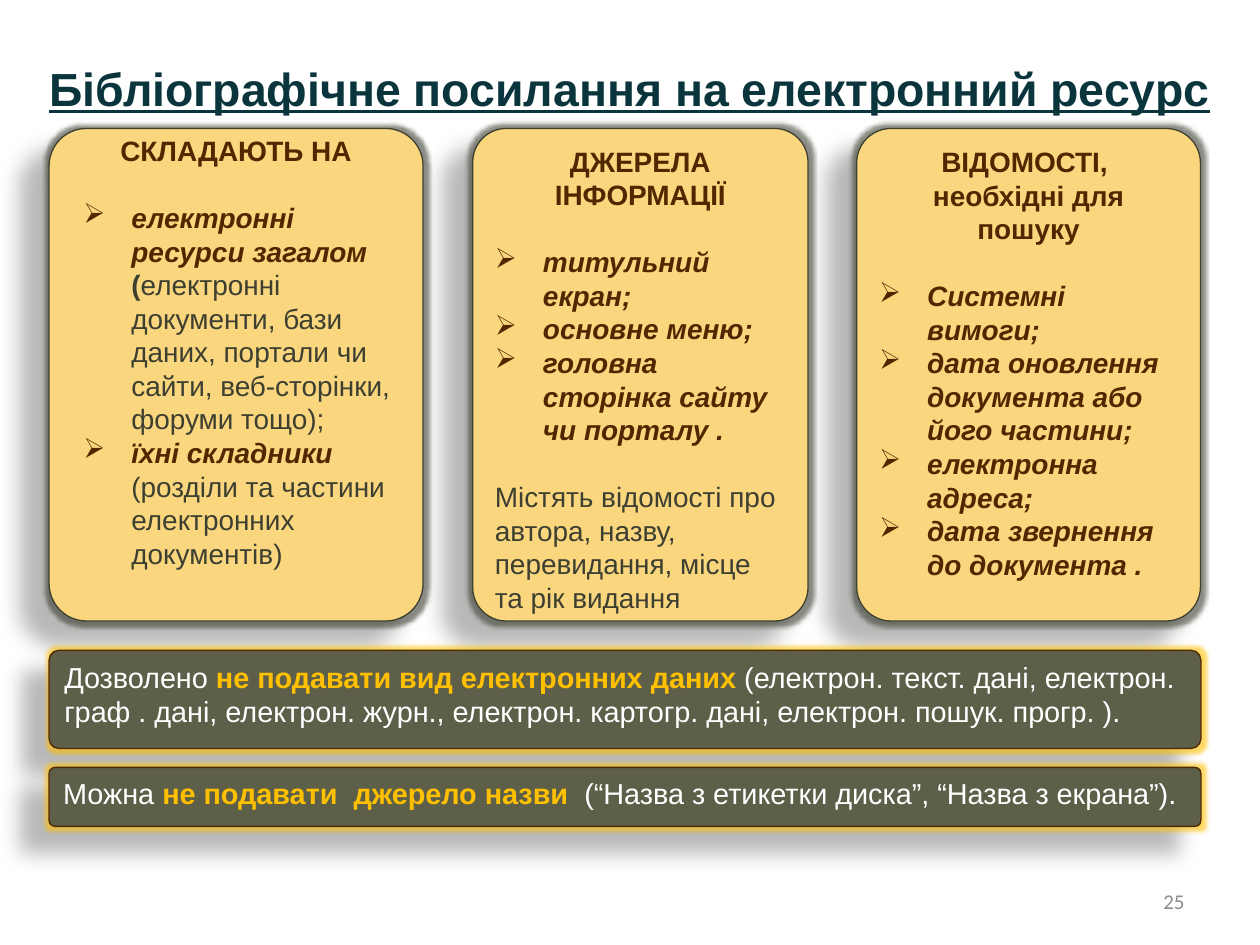
"""Slide on bibliographic references to electronic resources."""
from dataclasses import dataclass

from lxml import etree
from pptx import Presentation, util as u
from pptx.dml.color import RGBColor
from pptx.enum import shapes, text
from pptx.oxml import ns


@dataclass(frozen=True)
class Theme:
    font: str = "Arial"
    number_font: str = "Calibri"
    title: str = "0A353C"
    brown: str = "502800"
    olive: str = "3D3F31"
    sand: str = "FAD77E"
    moss: str = "5D5F49"
    gold: str = "FFC000"
    white: str = "FFFFFF"
    grey: str = "8C8C8C"
    black: str = "000000"
    title_size: float = 26.5
    card_size: float = 16
    bar_size: float = 16.5
    number_size: float = 12
    gap: float = 19


THEME = Theme()
HEAD = dict(color=THEME.brown, bold=True)
TERM = dict(HEAD, italic=True)
MARK = dict(color=THEME.olive, bold=True)
BODY = dict(color=THEME.olive)
PLAIN = dict(color=THEME.white)
KEY = dict(color=THEME.gold, bold=True)

TITLE = "Бібліографічне посилання на електронний ресурс"
NUMBER = "25"
CARDS = [
    dict(left=0.99, width=7.54, indent=1.19, anchor=text.MSO_ANCHOR.BOTTOM, bottom=0.81,
         heads=["СКЛАДАЮТЬ НА"],
         items=[
             [("електронні ресурси загалом ", TERM), ("(", MARK),
              ("електронні документи, бази даних, портали чи сайти, "
               "веб-сторінки, форуми тощо);", BODY)],
             [("їхні складники ", TERM),
              ("(розділи та частини електронних документів)", BODY)],
         ], closing=None),
    dict(left=9.53, width=6.76, indent=0.97, anchor=text.MSO_ANCHOR.TOP, bottom=0.13,
         heads=["ДЖЕРЕЛА ІНФОРМАЦІЇ"],
         items=[[("титульний екран;", TERM)], [("основне меню;", TERM)],
                [("головна сторінка сайту чи порталу .", TERM)]],
         closing="Містять відомості про автора, назву, перевидання, місце та рік видання"),
    dict(left=17.27, width=6.93, indent=0.97, anchor=text.MSO_ANCHOR.TOP, bottom=0.13,
         heads=["ВІДОМОСТІ, ", "необхідні для пошуку"],
         items=[[("Системні вимоги;", TERM)],
                [("дата оновлення документа або його частини;", TERM)],
                [("електронна адреса;", TERM)],
                [("дата звернення до документа .", TERM)]],
         closing=None),
]
BARS = [
    (13.11, 1.98, [
        ("Дозволено ", PLAIN), ("не подавати вид електронних даних ", KEY),
        ("(електрон. текст. дані, електрон. граф . дані, електрон. журн., "
         "електрон. картогр. дані, електрон. пошук. прогр. ).", PLAIN)]),
    (15.47, 1.19, [
        ("Можна ", PLAIN), ("не подавати  джерело назви  ", KEY),
        ("(“Назва з етикетки диска”, “Назва з екрана”).", PLAIN)]),
]
CARD_TOP, CARD_HEIGHT = 2.59, 9.93
BAR_LEFT, BAR_WIDTH = 0.99, 23.22
HANG = 0.97


def add_span(para, words, *, size, color, font=THEME.font, bold=False, italic=False,
             underline=False):
    span = para.add_run()
    span.text = words
    style = span.font
    style.name, style.size = font, u.Pt(size)
    style.bold, style.italic, style.underline = bold, italic, underline
    style.color.rgb = RGBColor.from_string(color)


def add_para(frame, spans, *, size, align=text.PP_ALIGN.LEFT, before=0, indent=None):
    fresh = not frame.paragraphs[0].runs
    para = frame.paragraphs[0] if fresh else frame.add_paragraph()
    para.alignment = align
    if before:
        para.space_before = u.Pt(before)
    if indent is not None:
        props = para._p.get_or_add_pPr()
        props.set("marL", str(u.Cm(indent)))
        props.set("indent", str(-u.Cm(HANG)))
        etree.SubElement(props, ns.qn("a:buChar")).set("char", "➢")
    for words, style in spans:
        add_span(para, words, **{"size": size, **style})


def add_label(page, words, left, top, width, height, *, align, **style):
    box = page.shapes.add_textbox(*map(u.Cm, (left, top, width, height)))
    frame = box.text_frame
    frame.word_wrap = True
    frame.vertical_anchor = text.MSO_ANCHOR.MIDDLE
    add_para(frame, [(words, style)], size=style["size"], align=align)


def add_effect(effects, name, color, alpha, **settings):
    effect = etree.SubElement(effects, ns.qn(name))
    for key, value in settings.items():
        effect.set(key, str(value))
    shade = etree.SubElement(effect, ns.qn("a:srgbClr"))
    shade.set("val", color)
    etree.SubElement(shade, ns.qn("a:alpha")).set("val", str(alpha * 1000))


def add_panel(page, left, top, width, height, *, fill, line, glow):
    box = page.shapes.add_shape(shapes.MSO_SHAPE.ROUNDED_RECTANGLE,
                                *map(u.Cm, (left, top, width, height)))
    box.adjustments[0] = 0.1
    box.fill.solid()
    box.fill.fore_color.rgb = RGBColor.from_string(fill)
    box.line.color.rgb = RGBColor.from_string(line)
    box.line.width = u.Pt(0.75)
    box.shadow.inherit = False
    effects = box._element.spPr.find(ns.qn("a:effectLst"))
    add_effect(effects, "a:glow", glow, 60, rad=u.Pt(5))
    add_effect(effects, "a:outerShdw", THEME.black, 28, blurRad=u.Pt(11.8),
               dist=u.Pt(19.7), dir=141 * 60000, rotWithShape=0)
    frame = box.text_frame
    frame.word_wrap = True
    frame.vertical_anchor = text.MSO_ANCHOR.TOP
    return frame


def add_card(page, card):
    frame = add_panel(page, card["left"], CARD_TOP, card["width"], CARD_HEIGHT,
                      fill=THEME.sand, line=THEME.olive, glow=THEME.olive)
    frame.vertical_anchor = card["anchor"]
    frame.margin_bottom = u.Cm(card["bottom"])
    for head in card["heads"]:
        add_para(frame, [(head, HEAD)], size=THEME.card_size, align=text.PP_ALIGN.CENTER)
    for index, spans in enumerate(card["items"]):
        add_para(frame, spans, size=THEME.card_size, indent=card["indent"],
                 before=0 if index else THEME.gap)
    if card["closing"]:
        add_para(frame, [(card["closing"], BODY)], size=THEME.card_size, before=THEME.gap)


def main():
    deck = Presentation()
    deck.slide_width, deck.slide_height = u.Cm(25.4), u.Cm(19.05)
    page = deck.slides.add_slide(deck.slide_layouts[6])
    add_label(page, TITLE, 0, 0.58, 25.4, 2.39, align=text.PP_ALIGN.CENTER,
              size=THEME.title_size, color=THEME.title, bold=True, underline=True)
    add_label(page, NUMBER, 18.21, 17.65, 5.92, 1.02, align=text.PP_ALIGN.RIGHT,
              size=THEME.number_size, color=THEME.grey, font=THEME.number_font)
    for card in CARDS:
        add_card(page, card)
    for top, height, spans in BARS:
        frame = add_panel(page, BAR_LEFT, top, BAR_WIDTH, height,
                          fill=THEME.moss, line=THEME.brown, glow=THEME.gold)
        add_para(frame, spans, size=THEME.bar_size)
    deck.save("out.pptx")


if __name__ == "__main__":
    main()
